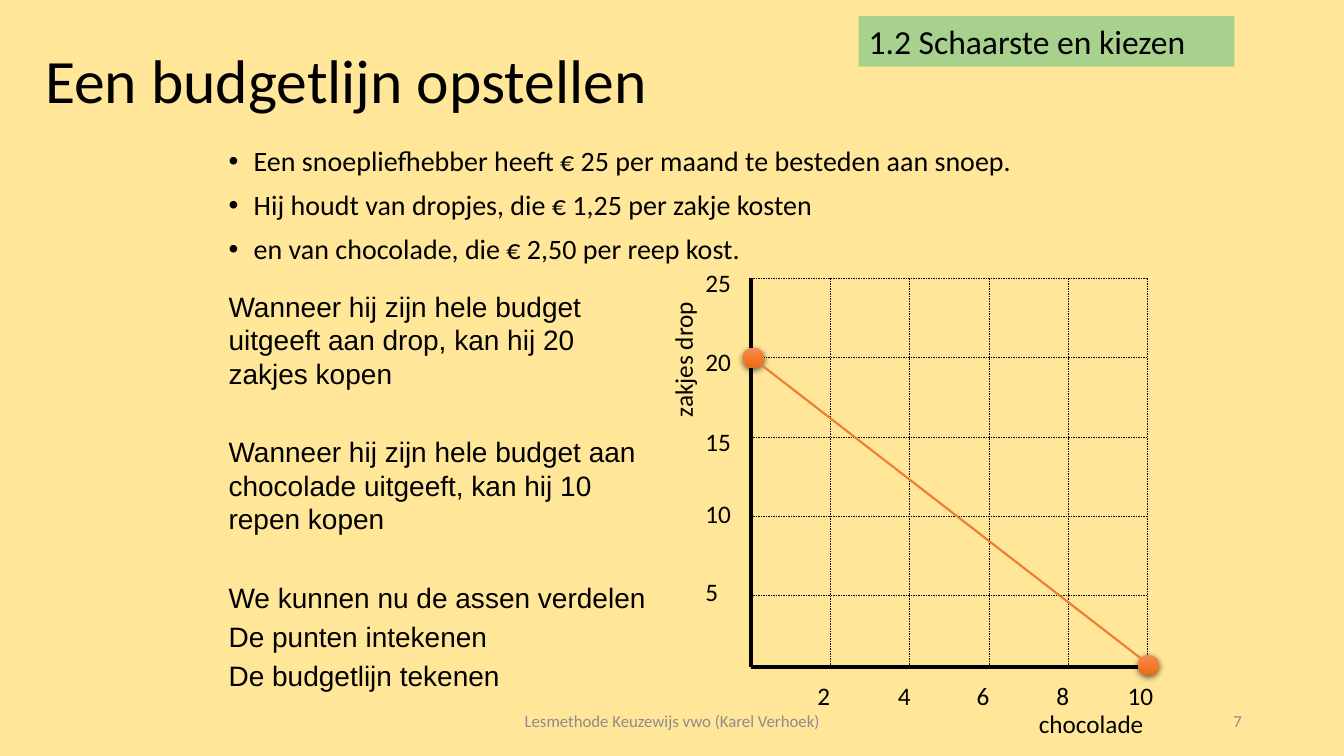
from copy import deepcopy

from lxml import etree
from pptx import Presentation
from pptx import util as u
from pptx.dml.color import RGBColor
from pptx.enum import dml, shapes, text
from pptx.oxml import ns, parse_xml

ALIGN = text.PP_ALIGN
ANCHOR = text.MSO_ANCHOR


def color(hex_string):
    return RGBColor.from_string(hex_string)


def write(frame, *lines, size=18, font="Calibri", ink="000000", align=ALIGN.LEFT,
          anchor=ANCHOR.TOP, wrap=True, before=0, spacing=None, bullet=None):
    """Fill a text frame; before is one gap in points or a list with one per line."""
    frame.word_wrap = wrap
    frame.vertical_anchor = anchor
    frame.auto_size = text.MSO_AUTO_SIZE.NONE
    gaps = before if isinstance(before, list) else [before] * len(lines)
    for index, (line, gap) in enumerate(zip(lines, gaps)):
        paragraph = frame.add_paragraph() if index else frame.paragraphs[0]
        paragraph.alignment = align
        paragraph.space_before = u.Pt(gap)
        if spacing:
            paragraph.line_spacing = spacing
        if bullet:
            properties = paragraph._p.get_or_add_pPr()
            properties.set("marL", str(u.Cm(0.635)))
            properties.set("indent", str(-u.Cm(0.635)))
            mark_font = etree.SubElement(properties, ns.qn("a:buFont"))
            mark_font.set("typeface", "Arial")
            etree.SubElement(properties, ns.qn("a:buChar")).set("char", bullet)
        run = paragraph.add_run()
        run.text = line
        run.font.size = u.Pt(size)
        run.font.name = font
        run.font.color.rgb = color(ink)


class BudgetSlide:
    background = "FFE699"
    green = "A9D18E"
    orange = "ED7D31"
    marker_stops = ("F18C57", "F67B28", "E56C19")
    black = "000000"
    grey = "8C8C8C"

    def __init__(self, presentation):
        self.slide = presentation.slides.add_slide(presentation.slide_layouts[5])
        fill = self.slide.background.fill
        fill.solid()
        fill.fore_color.rgb = color(self.background)

    def title(self, line, left, top, width, height):
        title = self.slide.shapes.title
        title.left, title.top = u.Cm(left), u.Cm(top)
        title.width, title.height = u.Cm(width), u.Cm(height)
        write(title.text_frame, line, size=44, anchor=ANCHOR.MIDDLE, spacing=0.9)

    def text(self, lines, left, top, width, height, rotation=0, **style):
        box = self.slide.shapes.add_textbox(u.Cm(left), u.Cm(top), u.Cm(width), u.Cm(height))
        box.rotation = rotation
        write(box.text_frame, *lines, **style)

    def line(self, x1, y1, x2, y2, ink=black, width=0.25, dash=None):
        line = self.slide.shapes.add_connector(
            shapes.MSO_CONNECTOR.STRAIGHT, u.Cm(x1), u.Cm(y1), u.Cm(x2), u.Cm(y2))
        line.line.color.rgb = color(ink)
        line.line.width = u.Pt(width)
        if dash:
            line.line.dash_style = dash
        etree.SubElement(line._element.spPr, ns.qn("a:effectLst"))

    def shape(self, kind, left, top, width, height):
        shape = self.slide.shapes.add_shape(
            kind, u.Cm(left), u.Cm(top), u.Cm(width), u.Cm(height))
        shape.shadow.inherit = False
        shape.line.fill.background()
        return shape

    def label(self, line, left, top, width, height):
        label = self.shape(shapes.MSO_SHAPE.RECTANGLE, left, top, width, height)
        label.fill.solid()
        label.fill.fore_color.rgb = color(self.green)
        write(label.text_frame, line, size=24)

    def marker(self, left, top):
        marker = self.shape(shapes.MSO_SHAPE.OVAL, left, top, 0.53, 0.51)
        marker.fill.gradient()
        marker.fill.gradient_angle = 270
        first, last = marker.fill.gradient_stops
        for stop, ink in zip((first, last), self.marker_stops[::2]):
            stop.color.rgb = color(ink)
        properties = marker._element.spPr
        start = properties.find(".//" + ns.qn("a:gs"))
        middle = deepcopy(start)
        middle.set("pos", "50000")
        middle[0].set("val", self.marker_stops[1])
        start.addnext(middle)
        properties.find(ns.qn("a:effectLst")).append(parse_xml(
            f'<a:outerShdw {ns.nsdecls("a")} blurRad="{u.Pt(4.5)}" dist="{u.Pt(1.5)}" '
            'dir="5400000" algn="ctr" rotWithShape="0"><a:srgbClr val="000000">'
            '<a:alpha val="63000"/></a:srgbClr></a:outerShdw>'))


def main():
    presentation = Presentation()
    presentation.slide_width, presentation.slide_height = u.Cm(33.87), u.Cm(19.05)
    page = BudgetSlide(presentation)

    # Heading and assignment
    page.title("Een budgetlijn opstellen", 0.89, 1.07, 16.05, 2.08)
    page.text(["Een snoepliefhebber heeft € 25 per maand te besteden aan snoep.",
               "Hij houdt van dropjes, die € 1,25 per zakje kosten",
               "en van chocolade, die € 2,50 per reep kost."],
              5.51, 3.58, 22.86, 3.35, size=20, before=10, spacing=0.9, bullet="•")

    # Grid and axes
    left, top, bottom, step, cells = 18.92, 7.01, 16.81, 2, 5
    right = left + step * cells
    for index in range(cells):
        y = top + step * index
        x = left + step * (index + 1)
        page.line(left, y, right, y, dash=dml.MSO_LINE.DASH)
        page.line(x, top, x, bottom, dash=dml.MSO_LINE.DASH)
    page.line(left, top, left, bottom, width=3)
    page.line(right, bottom, left, bottom, width=3)

    # Axis titles and values
    page.text(["chocolade"], 25.93, 17.73, 3.18, 1.02, wrap=False)
    page.text(["zakjes drop"], 15.49, 8.53, 3.45, 1.02, rotation=270, wrap=False)
    for value, y in zip(range(25, 0, -5), (6.6, 8.59, 10.62, 12.42, 14.4)):
        page.text([str(value)], 17.53, y, 1.17, 1.02, wrap=False)
    for value, x in zip(range(2, 11, 2), (20.35, 22.38, 24.36, 26.37, 28.17)):
        page.text([str(value)], x, 17.02, 1.17, 1.02, wrap=False)

    # Explanation
    page.text(["Wanneer hij zijn hele budget uitgeeft aan drop, kan hij 20 zakjes kopen",
               "Wanneer hij zijn hele budget aan chocolade uitgeeft, kan hij 10 repen kopen",
               "We kunnen nu de assen verdelen",
               "De punten intekenen",
               "De budgetlijn tekenen"],
              5.51, 7.16, 11.2, 11.07, size=20, font="Arial", before=[4, 32, 32, 4, 4])

    # Budget line with its end points
    page.marker(18.72, 8.76)
    page.marker(28.68, 16.51)
    page.line(19.18, 9.19, 28.75, 16.59, ink=page.orange, width=1.5)

    # Chapter label and footer
    page.label("1.2 Schaarste en kiezen", 21.64, 0.41, 9.47, 1.27)
    footer = dict(size=12, ink=page.grey, anchor=ANCHOR.MIDDLE)
    page.text(["Lesmethode Keuzewijs vwo (Karel Verhoek)"], 11.23, 17.65, 11.43, 1.02,
              align=ALIGN.CENTER, **footer)
    page.text(["7"], 23.93, 17.65, 7.62, 1.02, align=ALIGN.RIGHT, **footer)

    presentation.save("out.pptx")


if __name__ == "__main__":
    main()
